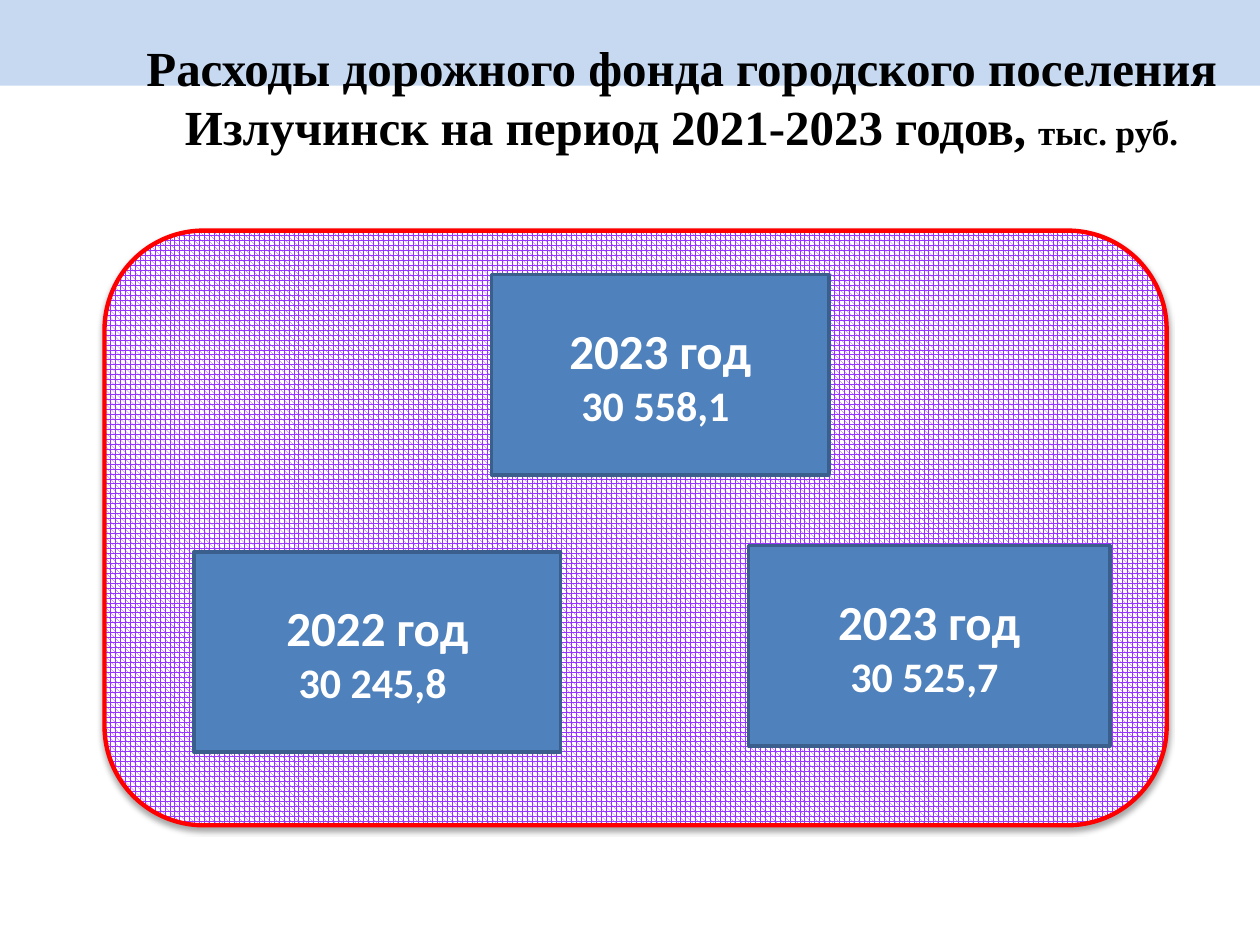
from lxml import etree
from pptx import Presentation
from pptx.dml.color import RGBColor
from pptx.enum.dml import MSO_PATTERN
from pptx.enum.shapes import MSO_SHAPE
from pptx.enum.text import MSO_ANCHOR, MSO_AUTO_SIZE, PP_ALIGN
from pptx.oxml import parse_xml
from pptx.oxml.ns import nsdecls
from pptx.util import Inches, Pt

RECTANGLE = MSO_SHAPE.RECTANGLE
ROUNDED_RECTANGLE = MSO_SHAPE.ROUNDED_RECTANGLE
SPHERE = MSO_PATTERN.SPHERE
MIDDLE = MSO_ANCHOR.MIDDLE
CENTER = PP_ALIGN.CENTER
NO_AUTOFIT = MSO_AUTO_SIZE.NONE

BLACK = RGBColor(0x00, 0x00, 0x00)
WHITE = RGBColor(0xFF, 0xFF, 0xFF)
PALE_BLUE = RGBColor(0xC6, 0xD9, 0xF1)
BLUE = RGBColor(0x4F, 0x81, 0xBD)
DARK_BLUE = RGBColor(0x3A, 0x5F, 0x8C)
VIOLET = RGBColor(0x99, 0x33, 0xFF)
RED = RGBColor(0xFF, 0x00, 0x00)

TITLE_FONT = "Times New Roman"
BODY_FONT = "Calibri"
LARGE = Pt(28)
CARD_HEIGHT = 1.59
CARDS = [
    (3.9, 2.18, 2.68, "2023 год", "30 558,1 "),
    (1.54, 4.38, 2.91, "2022 год", "30 245,8 "),
    (5.94, 4.33, 2.87, "2023 год", "30 525,7 "),
]


class SlideBuilder:
    def __init__(self, slide):
        self.slide = slide

    def add_box(self, kind, left, top, width, height):
        shape = self.slide.shapes.add_shape(
            kind, Inches(left), Inches(top), Inches(width), Inches(height)
        )
        shape.shadow.inherit = False
        return shape

    def add_band(self):
        band = self.add_box(RECTANGLE, 0, 0, 10, 0.68)
        band.fill.solid()
        band.fill.fore_color.rgb = PALE_BLUE
        band.line.fill.background()
        band._element.addnext(self.slide.shapes.title._element)

    def add_title(self, text, unit):
        title = self.slide.shapes.title
        title.left, title.top = Inches(0.91), Inches(0.14)
        title.width, title.height = Inches(9), Inches(1.25)
        frame = title.text_frame
        frame.auto_size = NO_AUTOFIT
        frame.vertical_anchor = MIDDLE
        paragraph = frame.paragraphs[0]
        paragraph.alignment = CENTER
        paragraph.font.name = TITLE_FONT
        paragraph.font.bold = True
        paragraph.font.color.rgb = BLACK
        for words, size in ((text, LARGE), (unit, Pt(20))):
            run = paragraph.add_run()
            run.text = words
            run.font.size = size

    def add_panel(self):
        panel = self.add_box(ROUNDED_RECTANGLE, 0.83, 1.83, 8.43, 4.72)
        panel.fill.patterned()
        panel.fill.pattern = SPHERE
        panel.fill.fore_color.rgb = VIOLET
        panel.fill.back_color.rgb = WHITE
        panel.line.color.rgb = RED
        panel.line.width = Pt(2.5)
        effects = panel._element.spPr.find("{*}effectLst")
        shadow = parse_xml(
            f'<a:outerShdw {nsdecls("a")} blurRad="{Pt(3.1)}" dist="{Pt(1.8)}" '
            'dir="5400000" rotWithShape="0"/>'
        )
        color = etree.SubElement(shadow, shadow.tag.replace("outerShdw", "srgbClr"), val=str(BLACK))
        etree.SubElement(color, color.tag.replace("srgbClr", "alpha"), val="35000")
        effects.append(shadow)

    def add_card(self, left, top, width, year, amount):
        card = self.add_box(RECTANGLE, left, top, width, CARD_HEIGHT)
        card.fill.solid()
        card.fill.fore_color.rgb = BLUE
        card.line.color.rgb = DARK_BLUE
        card.line.width = Pt(2)
        frame = card.text_frame
        frame.word_wrap = True
        frame.vertical_anchor = MIDDLE
        frame.text = f"{year}\n{amount}"
        for paragraph, size in zip(frame.paragraphs, (LARGE, Pt(24))):
            paragraph.alignment = CENTER
            paragraph.font.name = BODY_FONT
            paragraph.font.size = size
            paragraph.font.bold = True
            paragraph.font.color.rgb = WHITE


def main():
    presentation = Presentation()
    presentation.slide_width = Inches(10)
    presentation.slide_height = Inches(7.5)
    builder = SlideBuilder(presentation.slides.add_slide(presentation.slide_layouts[5]))
    builder.add_band()
    builder.add_title(
        "Расходы дорожного фонда городского поселения Излучинск на период 2021-2023 годов, ",
        "тыс. руб.",
    )
    builder.add_panel()
    for card in CARDS:
        builder.add_card(*card)
    presentation.save("out.pptx")


if __name__ == "__main__":
    main()
